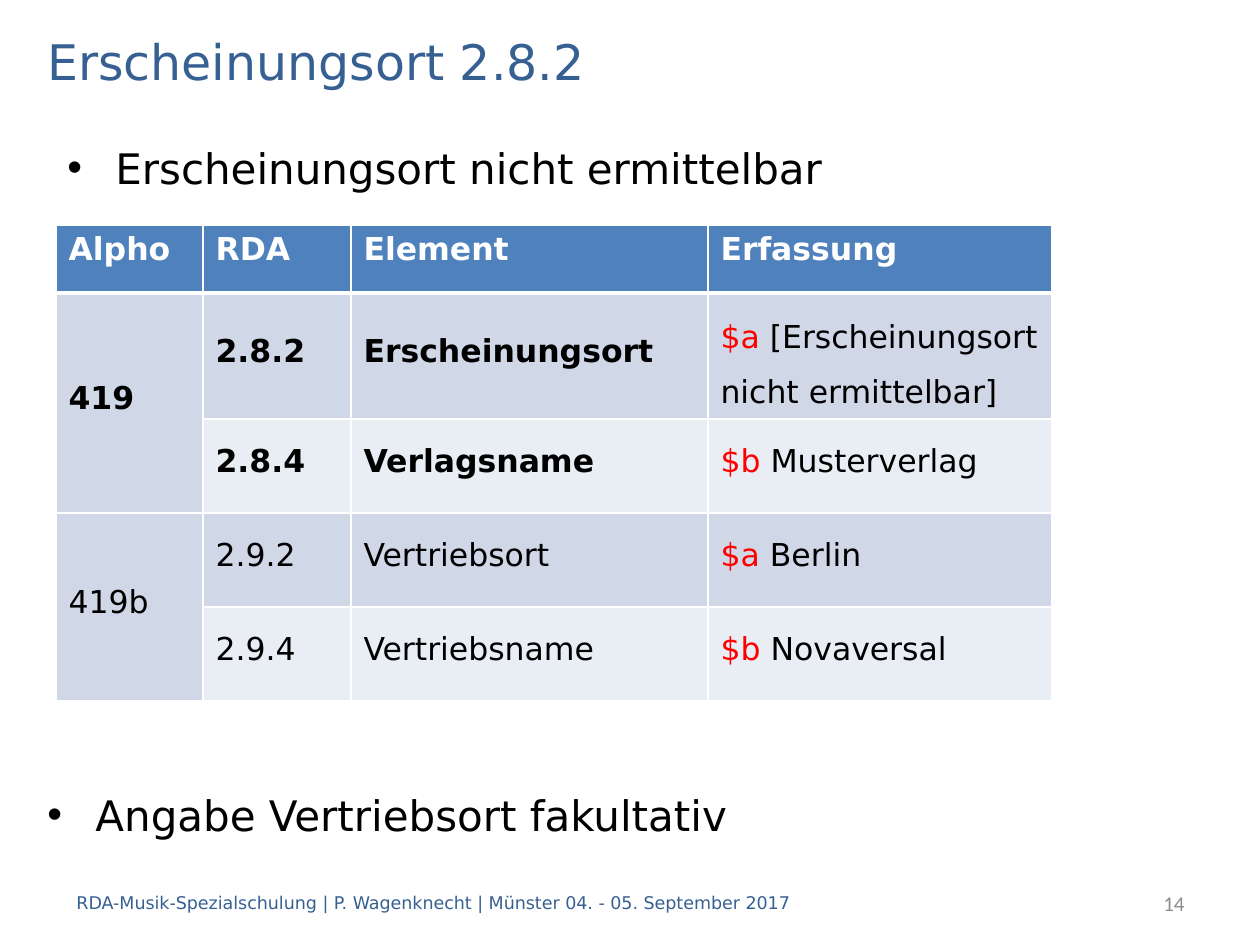
from lxml import etree
from pptx import Presentation
from pptx.dml.color import RGBColor
from pptx.enum.text import MSO_ANCHOR, PP_ALIGN
from pptx.oxml.ns import qn
from pptx.util import Pt

PX = 914400 // 126
MIDDLE, TOP = MSO_ANCHOR.MIDDLE, MSO_ANCHOR.TOP
LEFT, RIGHT = PP_ALIGN.LEFT, PP_ALIGN.RIGHT
FONT = "DejaVu Sans"
COLORS = {
    "heading": "376092", "number": "8C8C8C", "text": "000000", "code": "FF0000",
    "header": "4F81BD", "odd": "D0D8E8", "even": "E9EDF4", "white": "FFFFFF",
}


def style(font, size, color, name=FONT, bold=False):
    font.size, font.name, font.bold = Pt(size), name, bold
    font.color.rgb = RGBColor.from_string(COLORS[color])


def add_text(box, text, size, color, name=FONT, align=LEFT, anchor=MIDDLE):
    frame = slide.shapes.add_textbox(*(n * PX for n in box)).text_frame
    frame.word_wrap = True
    frame.vertical_anchor = anchor
    paragraph = frame.paragraphs[0]
    paragraph.text = text
    paragraph.alignment = align
    style(paragraph.font, size, color, name)
    return paragraph


prs = Presentation()
prs.slide_width, prs.slide_height = 1260 * PX, 945 * PX
slide = prs.slides.add_slide(prs.slide_layouts[6])

add_text((35, 25, 1191, 71), "Erscheinungsort 2.8.2", 28, "heading")
add_text((64, 878, 1052, 50),
         "RDA-Musik-Spezialschulung | P. Wagenknecht | Münster 04. - 05. September 2017",
         10, "heading")
add_text((997, 878, 200, 50), "14", 12, "number", "Calibri", RIGHT)

for left, top, statement in [
    (55, 136, "Erscheinungsort nicht ermittelbar"),
    (35, 783, "Angabe Vertriebsort fakultativ"),
]:
    bullet = add_text((left, top, 1191, 89), statement, 24, "text", anchor=TOP)
    bullet.space_before = Pt(5)
    properties = bullet._p.get_or_add_pPr()
    properties.set("marL", str(48 * PX))
    properties.set("indent", str(-48 * PX))
    etree.SubElement(properties, qn("a:buFont"), typeface="Arial")
    etree.SubElement(properties, qn("a:buChar"), char="•")

rows = [
    ("Alpho", "RDA", "Element", ("", "Erfassung")),
    ("419", "2.8.2", "Erscheinungsort", ("$a", " [Erscheinungsort nicht ermittelbar]")),
    ("", "2.8.4", "Verlagsname", ("$b", " Musterverlag")),
    ("419b", "2.9.2", "Vertriebsort", ("$a", " Berlin")),
    ("", "2.9.4", "Vertriebsname", ("$b", " Novaversal")),
]
widths = [147, 148, 357, 344]
heights = [68, 122, 94, 94, 94]
fields = slide.shapes.add_table(
    len(rows), len(widths), 56 * PX, 225 * PX, sum(widths) * PX, sum(heights) * PX).table
for column, width in zip(fields.columns, widths):
    column.width = width * PX
for row, height in zip(fields.rows, heights):
    row.height = height * PX

for r, entries in enumerate(rows):
    for c, entry in enumerate(entries):
        cell = fields.cell(r, c)
        cell.fill.solid()
        band = "header" if r == 0 else "odd" if r % 2 or c == 0 else "even"
        cell.fill.fore_color.rgb = RGBColor.from_string(COLORS[band])
        for position, side in enumerate(("lnL", "lnR", "lnT", "lnB")):
            thick = (r, side) in ((0, "lnB"), (1, "lnT"))
            border = etree.Element(qn("a:" + side), w=str(Pt(3 if thick else 1)))
            line_fill = etree.SubElement(border, qn("a:solidFill"))
            etree.SubElement(line_fill, qn("a:srgbClr"), val=COLORS["white"])
            cell._tc.get_or_add_tcPr().insert(position, border)

        paragraph = cell.text_frame.paragraphs[0]
        code, value = entry if c == 3 else ("", entry)
        if code:
            code_run = paragraph.add_run()
            code_run.text = code
            code_run.font.color.rgb = RGBColor.from_string(COLORS["code"])
        if value:
            paragraph.add_run().text = value
        style(paragraph.font, 18, "text" if r else "white",
              bold=r == 0 or (r < 3 and c < 3))
        if r:
            cell.vertical_anchor = MIDDLE
            paragraph.space_before = paragraph.space_after = Pt(6)
            paragraph.line_spacing = 1.5 if (r, c) == (1, 3) else Pt(16)

for first in (1, 3):
    fields.cell(first, 0).merge(fields.cell(first + 1, 0))

prs.save("out.pptx")
